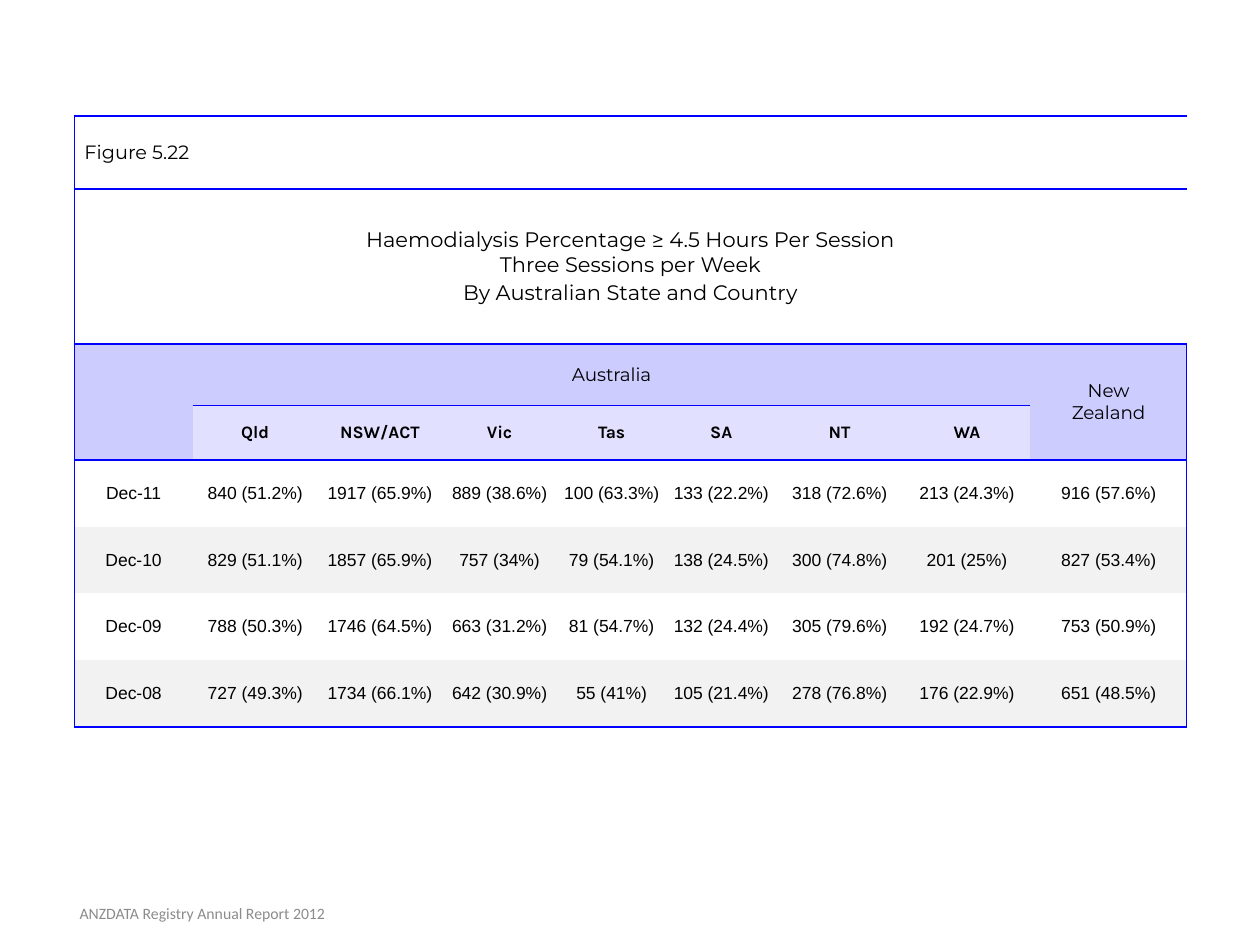
from lxml.etree import SubElement
from pptx import Presentation
from pptx.dml.color import RGBColor
from pptx.enum.text import MSO_ANCHOR, PP_ALIGN
from pptx.oxml.ns import qn
from pptx.util import Inches, Pt

# Content
FIGURE = "Figure 5.22"
TITLE = ["Haemodialysis Percentage ≥ 4.5 Hours Per Session",
         "Three Sessions per Week",
         "By Australian State and Country"]
STATES = ["Qld", "NSW/ACT", "Vic", "Tas", "SA", "NT", "WA"]
DATA = [
    ["Dec-11", "840 (51.2%)", "1917 (65.9%)", "889 (38.6%)", "100 (63.3%)",
     "133 (22.2%)", "318 (72.6%)", "213 (24.3%)", "916 (57.6%)"],
    ["Dec-10", "829 (51.1%)", "1857 (65.9%)", "757 (34%)", "79 (54.1%)",
     "138 (24.5%)", "300 (74.8%)", "201 (25%)", "827 (53.4%)"],
    ["Dec-09", "788 (50.3%)", "1746 (64.5%)", "663 (31.2%)", "81 (54.7%)",
     "132 (24.4%)", "305 (79.6%)", "192 (24.7%)", "753 (50.9%)"],
    ["Dec-08", "727 (49.3%)", "1734 (66.1%)", "642 (30.9%)", "55 (41%)",
     "105 (21.4%)", "278 (76.8%)", "176 (22.9%)", "651 (48.5%)"],
]
FOOTER = "ANZDATA Registry Annual Report 2012"

# Layout and colours
COL_WIDTHS = [0.94, 0.99, 0.99, 0.91, 0.87, 0.87, 1.01, 1.01, 1.24]
ROW_HEIGHTS = [0.58, 1.23, 0.49, 0.43] + [0.53] * len(DATA)
N_ROWS, N_COLS = len(ROW_HEIGHTS), len(COL_WIDTHS)
FIRST_DATA = N_ROWS - len(DATA)
LAST = N_COLS - 1
BLUE, HEADER, SUBHEADER, BAND = "0000FF", "CCCCFF", "E1E1FF", "F2F2F2"


def rgb(value):
    return RGBColor.from_string(value)


def write(tf, lines, size, font, bold=False, color="000000", align=PP_ALIGN.CENTER):
    tf.text = "\n".join(lines)
    for p in tf.paragraphs:
        p.alignment = align
        for r in p.runs:
            r.font.size, r.font.name, r.font.bold = Pt(size), font, bold
            r.font.color.rgb = rgb(color)


def fill_cell(row, col, lines, size, font="Montserrat", **style):
    cell = table.cell(row, col)
    write(cell.text_frame, lines, size, font, **style)
    cell.vertical_anchor = MSO_ANCHOR.MIDDLE


def has_rule(edge, col):
    """Whether a horizontal line runs above row number edge in this column."""
    return edge in (0, 1, 2, FIRST_DATA, N_ROWS) or (edge == 3 and 0 < col < LAST)


def set_borders(cell, row, col):
    sides = {"lnL": col == 0, "lnR": col == LAST,
             "lnT": has_rule(row, col), "lnB": has_rule(row + 1, col)}
    tc_pr = cell._tc.get_or_add_tcPr()
    for tag, visible in sides.items():
        ln = SubElement(tc_pr, qn(f"a:{tag}"), w=str(Pt(1)))
        if visible:
            SubElement(SubElement(ln, qn("a:solidFill")), qn("a:srgbClr"), val=BLUE)
        else:
            SubElement(ln, qn("a:noFill"))


def cell_color(row, col):
    if row >= FIRST_DATA:
        return BAND if (row - FIRST_DATA) % 2 else None
    if row == 3 and 0 < col < LAST:
        return SUBHEADER
    return HEADER if row >= 2 else None


prs = Presentation()
prs.slide_width, prs.slide_height = Inches(10), Inches(7.5)
s = prs.slides.add_slide(prs.slide_layouts[6])

# Table grid
table = s.shapes.add_table(N_ROWS, N_COLS, Inches(0.59), Inches(0.92),
                           Inches(sum(COL_WIDTHS)), Inches(sum(ROW_HEIGHTS))).table
table.first_row = table.horz_banding = False
for column, width in zip(table.columns, COL_WIDTHS):
    column.width = Inches(width)
for row, height in zip(table.rows, ROW_HEIGHTS):
    row.height = Inches(height)

# Borders, fills and margins
for row in range(N_ROWS):
    for col in range(N_COLS):
        cell = table.cell(row, col)
        set_borders(cell, row, col)
        color = cell_color(row, col)
        if color:
            cell.fill.solid()
            cell.fill.fore_color.rgb = rgb(color)
        else:
            cell.fill.background()
        cell.margin_left = cell.margin_right = Inches(0.04 if row else 0.08)
        cell.margin_top = cell.margin_bottom = Inches(0.04 if row else 0)

# Merged heading cells
for first, last in [((0, 0), (0, LAST)), ((1, 0), (1, LAST)), ((2, 0), (3, 0)),
                    ((2, 1), (2, LAST - 1)), ((2, LAST), (3, LAST))]:
    table.cell(*first).merge(table.cell(*last))

# Headings
fill_cell(0, 0, [FIGURE], 11, align=PP_ALIGN.LEFT)
fill_cell(1, 0, TITLE, 12)
table.cell(1, 0).text_frame.paragraphs[-1].line_spacing = 1.1
fill_cell(2, 1, ["Australia"], 10.5)
fill_cell(2, LAST, ["New", "Zealand"], 10.5)
for col, state in enumerate(STATES, 1):
    fill_cell(3, col, [state], 10, "Karla", bold=True)

# Data rows
for row, values in enumerate(DATA, FIRST_DATA):
    for col, value in enumerate(values):
        fill_cell(row, col, [value], 10, "Arial")
        table.cell(row, col).text_frame.paragraphs[0].space_after = Pt(14)

# Footer
tf = s.shapes.add_textbox(Inches(0.02), Inches(7.05), Inches(3.17), Inches(0.4)).text_frame
tf.word_wrap = True
tf.vertical_anchor = MSO_ANCHOR.MIDDLE
write(tf, [FOOTER], 9, "Calibri", color="8C8C8C")

prs.save("out.pptx")
